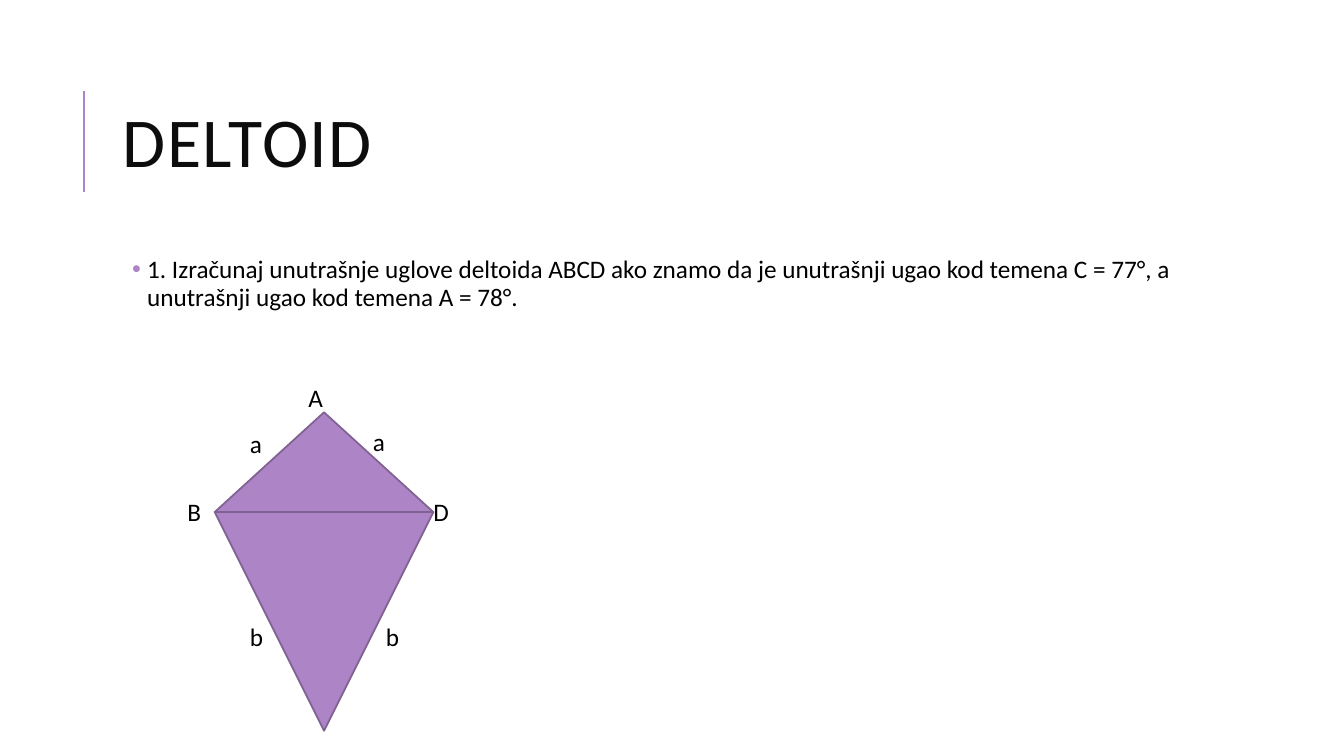
from typing import Any, NamedTuple

from lxml.etree import SubElement
from pptx import Presentation
from pptx.dml.color import RGBColor
from pptx.enum.shapes import MSO_CONNECTOR, MSO_SHAPE
from pptx.enum.text import MSO_ANCHOR, MSO_AUTO_SIZE, PP_ALIGN
from pptx.oxml.ns import qn
from pptx.util import Pt

PURPLE = RGBColor(0xAD, 0x84, 0xC6)
DARK_PURPLE = RGBColor(0x80, 0x62, 0x92)
BLACK = RGBColor(0x00, 0x00, 0x00)
NEAR_BLACK = RGBColor(0x0D, 0x0D, 0x0D)
FONT = "Calibri"
TASK = (
    "1. Izračunaj unutrašnje uglove deltoida ABCD ako znamo da je unutrašnji ugao "
    "kod temena C = 77°, a unutrašnji ugao kod temena A = 78°."
)
COLUMN_LEFT, COLUMN_WIDTH = 80.64, 765.36
KITE_LEFT, KITE_WIDTH = 153.36, 156.24
LABEL_HEIGHT = 29


class Label(NamedTuple):
    text: str
    left: float
    top: float
    width: float
    inset: float


class Triangle(NamedTuple):
    top: float
    height: float
    rotation: float


def side_label(text: str, left: float, top: float) -> Label:
    return Label(text, left, top, 18.5, 7.2)


def vertex_label(text: str, left: float, top: float) -> Label:
    return Label(text, left, top, 8, 0)


LABELS = [
    side_label("a", 171.36, 302.4),
    side_label("a", 259.2, 300.96),
    side_label("b", 171.36, 439.92),
    side_label("b", 268.56, 439.92),
    vertex_label("B", 133.92, 350.64),
    vertex_label("D", 309.6, 350.64),
    vertex_label("A", 220.32, 269.28),
]
TRIANGLES = [Triangle(294.48, 71.28, 0), Triangle(365.76, 156.24, 180)]


def apply_format(target: Any, values: dict[str, Any]) -> None:
    for name, value in values.items():
        setattr(target, name, value)


def write_text(shape: Any, text: str, size: float, color: RGBColor,
               frame_format: dict[str, Any], paragraph_format: dict[str, Any]) -> Any:
    """Fill the shape with one formatted paragraph and return its run."""
    frame = shape.text_frame
    apply_format(frame, {"word_wrap": True, **frame_format})
    paragraph = frame.paragraphs[0]
    apply_format(paragraph, {"alignment": PP_ALIGN.LEFT, **paragraph_format})
    run = paragraph.add_run()
    run.text = text
    apply_format(run.font, {"name": FONT, "size": Pt(size)})
    run.font.color.rgb = color
    return run


def place(shape: Any, top: float, height: float) -> None:
    apply_format(shape, {"left": Pt(COLUMN_LEFT), "top": Pt(top),
                         "width": Pt(COLUMN_WIDTH), "height": Pt(height)})


def add_title(slide: Any) -> None:
    title = slide.shapes.title
    place(title, 46.08, 118.08)
    run = write_text(
        title, "DELTOID", 50, NEAR_BLACK,
        {"vertical_anchor": MSO_ANCHOR.MIDDLE, "auto_size": MSO_AUTO_SIZE.NONE},
        {"line_spacing": 0.8},
    )
    run.font._element.set("spc", "100")


def add_task(slide: Any) -> None:
    body = slide.placeholders[1]
    place(body, 180, 316.8)
    properties = body.text_frame.paragraphs[0]._p.get_or_add_pPr()
    properties.set("marL", str(Pt(20.88)))
    properties.set("indent", str(Pt(-10.8)))
    bullet_color = SubElement(properties, qn("a:buClr"))
    SubElement(bullet_color, qn("a:srgbClr"), val=str(PURPLE))
    SubElement(properties, qn("a:buChar"), char="•")
    margins = {f"margin_{side}": Pt(3.6) for side in ("left", "top", "right", "bottom")}
    write_text(
        body, TASK, 18, BLACK,
        {"vertical_anchor": MSO_ANCHOR.TOP, "auto_size": MSO_AUTO_SIZE.NONE, **margins},
        {"line_spacing": 0.9, "space_before": Pt(0), "space_after": Pt(4)},
    )


def add_title_rule(slide: Any) -> None:
    rule = slide.shapes.add_connector(
        MSO_CONNECTOR.STRAIGHT, Pt(60), Pt(136.8), Pt(60), Pt(64.8))
    rule.line.color.rgb = PURPLE
    rule.line.width = Pt(1.5)
    SubElement(rule._element.spPr, qn("a:effectLst"))


def add_triangle(slide: Any, triangle: Triangle) -> None:
    shape = slide.shapes.add_shape(
        MSO_SHAPE.FLOWCHART_EXTRACT, Pt(KITE_LEFT), Pt(triangle.top),
        Pt(KITE_WIDTH), Pt(triangle.height))
    shape.rotation = triangle.rotation
    shape.shadow.inherit = False
    shape.fill.solid()
    shape.fill.fore_color.rgb = PURPLE
    shape.line.color.rgb = DARK_PURPLE
    shape.line.width = Pt(1.25)


def add_label(slide: Any, label: Label) -> None:
    box = slide.shapes.add_textbox(
        Pt(label.left), Pt(label.top), Pt(label.width), Pt(LABEL_HEIGHT))
    write_text(
        box, label.text, 18, BLACK,
        {"auto_size": MSO_AUTO_SIZE.SHAPE_TO_FIT_TEXT,
         "margin_left": Pt(label.inset), "margin_right": Pt(label.inset)},
        {},
    )


def main() -> None:
    presentation = Presentation()
    apply_format(presentation, {"slide_width": Pt(960), "slide_height": Pt(540)})
    slide = presentation.slides.add_slide(presentation.slide_layouts[1])
    add_title_rule(slide)
    add_title(slide)
    add_task(slide)
    for triangle in TRIANGLES:
        add_triangle(slide, triangle)
    for label in LABELS:
        add_label(slide, label)
    presentation.save("out.pptx")


if __name__ == "__main__":
    main()
